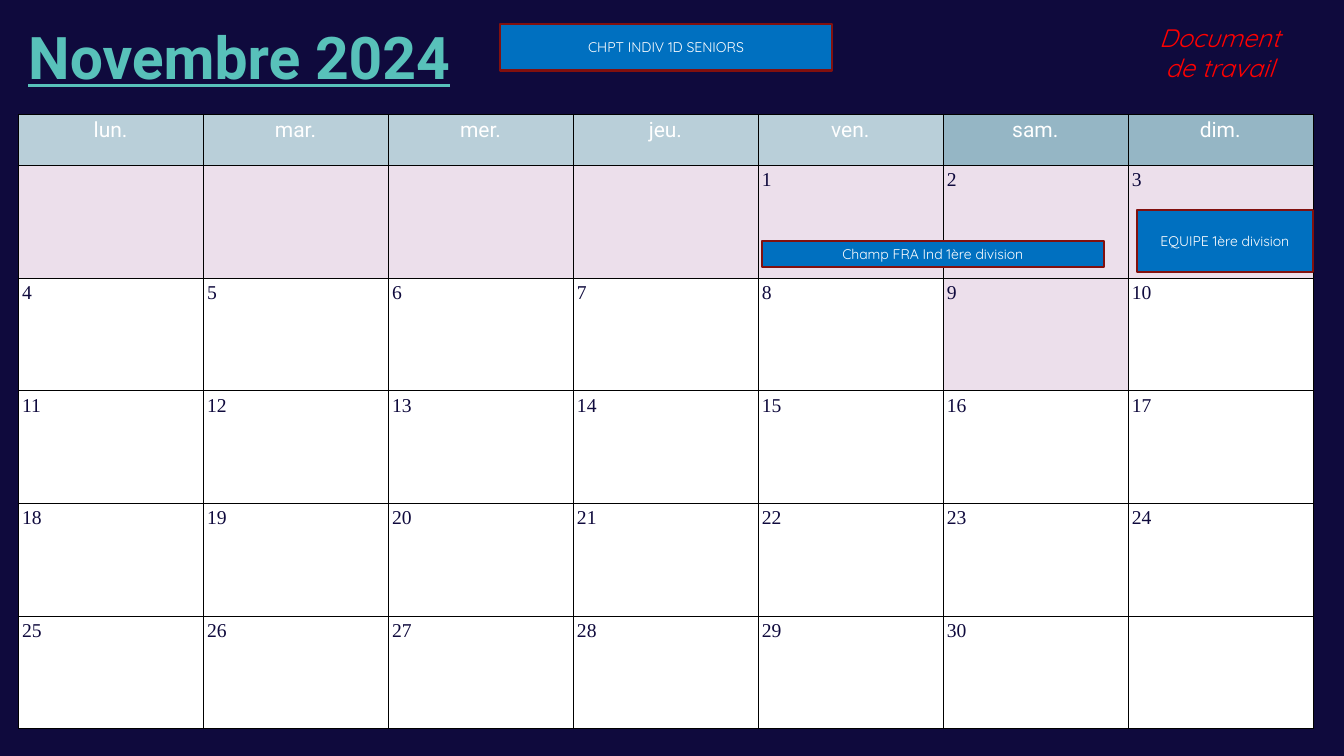
from lxml.etree import SubElement
from pptx import Presentation
from pptx.dml.color import RGBColor
from pptx.enum.shapes import MSO_SHAPE
from pptx.enum.text import MSO_ANCHOR, PP_ALIGN
from pptx.oxml.ns import qn
from pptx.util import Inches, Pt

NAVY = RGBColor(0x0F, 0x0A, 0x3D)
TEAL = RGBColor(0x58, 0xC1, 0xBA)
WHITE = RGBColor(0xFF, 0xFF, 0xFF)
RED = RGBColor(0xFF, 0x00, 0x00)
BLUE = RGBColor(0x00, 0x70, 0xC0)
MAROON = RGBColor(0x82, 0x10, 0x0E)
WEEKDAY = RGBColor(0xB9, 0xCF, 0xD9)
WEEKEND = RGBColor(0x95, 0xB6, 0xC5)
HOLIDAY = RGBColor(0xEC, 0xDF, 0xEB)
BLACK = "000000"

DAYS = ["lun.", "mar.", "mer.", "jeu.", "ven.", "sam.", "dim."]
WEEKS = 5
FIRST_COLUMN = 4  # the month starts on a Friday
LAST_DAY = 30
LAST_HOLIDAY = 3  # school holidays run from the first cell to this day
BRIDGE_DAY = 9

# Calendar box and its grid, in inches
CALENDAR = (0.18, 1.13, 12.84, 6.1)
HEADER_HEIGHT = 0.51
COLUMN_WIDTH = CALENDAR[2] / len(DAYS)
WEEK_HEIGHT = (CALENDAR[3] - HEADER_HEIGHT) / WEEKS


def write(paragraph, text, font_name, size, color, align=PP_ALIGN.LEFT):
    paragraph.alignment = align
    run = paragraph.add_run()
    run.text = text
    run.font.name = font_name
    run.font.size = Pt(size)
    run.font.color.rgb = color
    return run


def add_event(slide, box, text):
    shape = slide.shapes.add_shape(MSO_SHAPE.RECTANGLE, *map(Inches, box))
    shape.shadow.inherit = False
    shape.fill.solid()
    shape.fill.fore_color.rgb = BLUE
    shape.line.color.rgb = MAROON
    shape.line.width = Pt(1.5)
    frame = shape.text_frame
    frame.word_wrap = True
    frame.vertical_anchor = MSO_ANCHOR.MIDDLE
    write(frame.paragraphs[0], text, "Quicksand", 10, WHITE, PP_ALIGN.CENTER)


def grid_box(column, week, columns, weeks):
    """Turn a place in columns and weeks into inches."""
    left, top = CALENDAR[:2]
    return (left + column * COLUMN_WIDTH,
            top + HEADER_HEIGHT + week * WEEK_HEIGHT,
            columns * COLUMN_WIDTH, weeks * WEEK_HEIGHT)


def style_cell(cell, color):
    cell.fill.solid()
    cell.fill.fore_color.rgb = color
    cell.margin_left = cell.margin_right = Inches(0.04)
    cell.margin_top = cell.margin_bottom = Inches(0.04)
    # Borders come before the fill in the cell properties
    properties = cell._tc.get_or_add_tcPr()
    for position, side in enumerate(("a:lnL", "a:lnR", "a:lnT", "a:lnB")):
        border = SubElement(properties, qn(side), w=str(Pt(0.25)))
        fill = SubElement(border, qn("a:solidFill"))
        SubElement(fill, qn("a:srgbClr"), val=BLACK)
        properties.insert(position, border)


def add_calendar(slide, box):
    table = slide.shapes.add_table(WEEKS + 1, len(DAYS), *map(Inches, box)).table
    table.first_row = table.horz_banding = False
    for column in table.columns:
        column.width = Inches(COLUMN_WIDTH)
    for index, row in enumerate(table.rows):
        row.height = Inches(WEEK_HEIGHT if index else HEADER_HEIGHT)

    # Day names
    for column, name in enumerate(DAYS):
        cell = table.cell(0, column)
        style_cell(cell, WEEKEND if column >= 5 else WEEKDAY)
        write(cell.text_frame.paragraphs[0], name, "Roboto", 15, WHITE,
              PP_ALIGN.CENTER)

    # Dates
    for week in range(WEEKS):
        for column in range(len(DAYS)):
            day = week * len(DAYS) + column - FIRST_COLUMN + 1
            cell = table.cell(week + 1, column)
            holiday = day <= LAST_HOLIDAY or day == BRIDGE_DAY
            style_cell(cell, HOLIDAY if holiday else WHITE)
            if 1 <= day <= LAST_DAY:
                write(cell.text_frame.paragraphs[0], str(day),
                      "Times New Roman", 14, NAVY)


def add_title(slide, box):
    title = slide.shapes.title
    title.left, title.top, title.width, title.height = map(Inches, box)
    frame = title.text_frame
    frame.word_wrap = True
    frame.vertical_anchor = MSO_ANCHOR.TOP
    run = write(frame.paragraphs[0], "Novembre 2024", "Roboto", 42, TEAL)
    run.font.bold = True
    run.font.underline = True


def add_draft_note(slide, box):
    frame = slide.shapes.add_textbox(*map(Inches, box)).text_frame
    frame.word_wrap = True
    run = write(frame.paragraphs[0], "Document de travail", "Quicksand", 18, RED,
                PP_ALIGN.CENTER)
    run.font.italic = True


def main():
    presentation = Presentation()
    presentation.slide_width = Inches(13.33)
    presentation.slide_height = Inches(7.5)
    slide = presentation.slides.add_slide(presentation.slide_layouts[5])
    slide.background.fill.solid()
    slide.background.fill.fore_color.rgb = NAVY

    add_calendar(slide, CALENDAR)

    # Heading band
    add_title(slide, (CALENDAR[0], 0.16, 10.29, 1.53))
    add_event(slide, (4.96, 0.24, 3.29, 0.46), "CHPT INDIV 1D SENIORS")
    add_draft_note(slide, (11.27, 0.17, 1.65, 0.71))

    # Events on the calendar
    add_event(slide, grid_box(4.02, 0.67, 1.85, 0.23),
              "Champ FRA Ind 1ère division")
    add_event(slide, grid_box(6.05, 0.4, 0.95, 0.55), "EQUIPE 1ère division")

    presentation.save("out.pptx")


if __name__ == "__main__":
    main()
